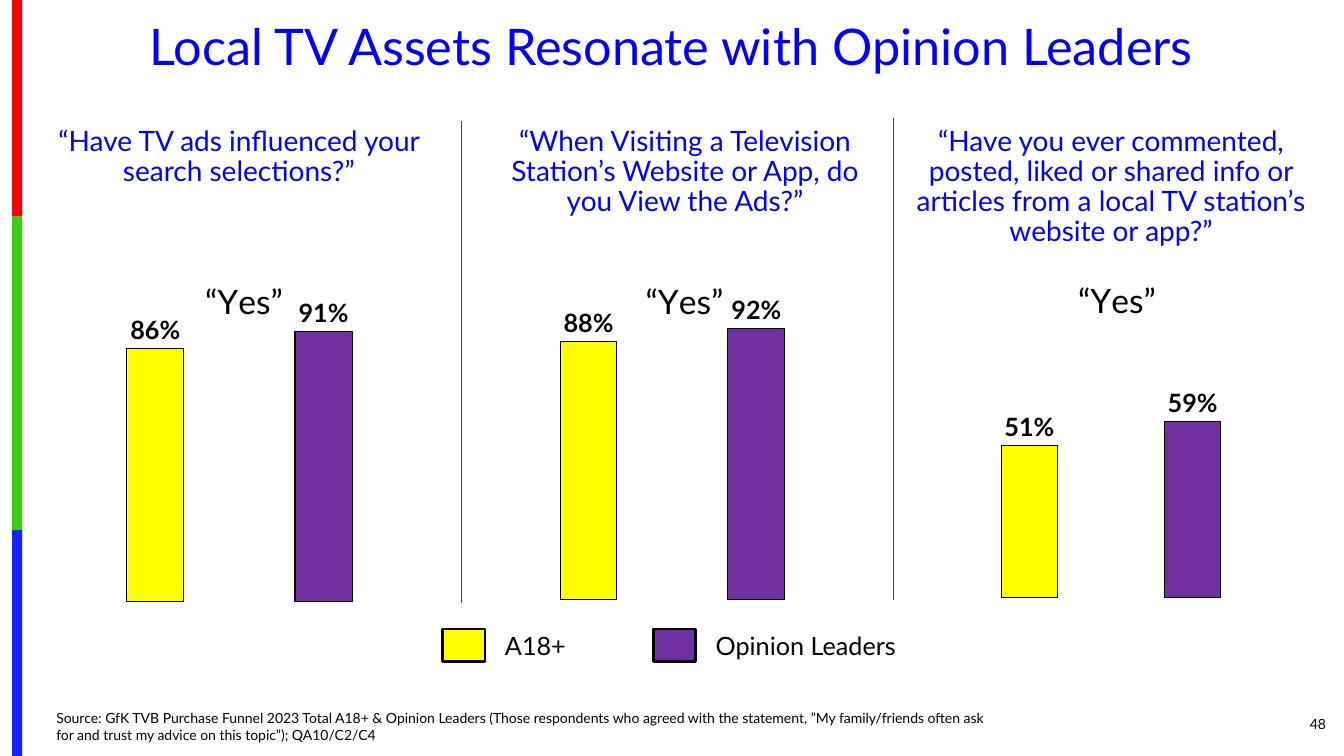
"""Build the slide on local TV assets and opinion leaders."""
from lxml import etree
from pptx import Presentation
from pptx import util as u
from pptx.chart.data import CategoryChartData
from pptx.dml.color import RGBColor
from pptx.enum import chart as ch, shapes, text
from pptx.oxml import parse_xml
from pptx.oxml.ns import nsdecls, qn

BLUE, BLACK, YELLOW, PURPLE, RULE = "0000FF", "000000", "FFFF00", "7030A0", "2D2DFE"
LEFT, CENTER, RIGHT = text.PP_ALIGN.LEFT, text.PP_ALIGN.CENTER, text.PP_ALIGN.RIGHT
TOP, MIDDLE, BOTTOM = text.MSO_ANCHOR.TOP, text.MSO_ANCHOR.MIDDLE, text.MSO_ANCHOR.BOTTOM


def rgb(value):
    return RGBColor.from_string(value)


def inches(*values):
    return [u.Inches(v) for v in values]


def set_attrs(obj, values):
    for name, value in values.items():
        setattr(obj, name, value)


class Deck:
    def __init__(self, font):
        self.font = font
        self.prs = Presentation()
        self.prs.slide_width, self.prs.slide_height = inches(13.33, 7.5)
        self.s = self.prs.slides.add_slide(self.prs.slide_layouts[5])

    def style(self, font, size, color=BLACK, bold=False):
        set_attrs(font, {"name": self.font, "size": u.Pt(size), "bold": bold})
        font.color.rgb = rgb(color)

    def fill_text(self, sp, words, size, color, align, anchor, spacing, wrap):
        tf = sp.text_frame
        set_attrs(tf, {"word_wrap": wrap, "vertical_anchor": anchor})
        p = tf.paragraphs[0]
        set_attrs(p, {"alignment": align, "line_spacing": spacing})
        r = p.add_run()
        r.text = words
        self.style(r.font, size, color)

    def title(self, words, box):
        sp = self.s.shapes.title
        set_attrs(sp, dict(zip(("left", "top", "width", "height"), inches(*box))))
        self.fill_text(sp, words, 36, BLUE, CENTER, TOP, 0.9, True)

    def label(self, words, box, size, color=BLACK, align=LEFT, anchor=TOP,
              spacing=1.0, wrap=True):
        sp = self.s.shapes.add_textbox(*inches(*box))
        self.fill_text(sp, words, size, color, align, anchor, spacing, wrap)

    def rect(self, box, color, line_width=None):
        sp = self.s.shapes.add_shape(shapes.MSO_SHAPE.RECTANGLE, *inches(*box))
        sp.shadow.inherit = False
        sp.fill.solid()
        sp.fill.fore_color.rgb = rgb(color)
        if line_width:
            sp.line.color.rgb = rgb(BLACK)
            sp.line.width = u.Pt(line_width)
        else:
            sp.line.fill.background()

    def divider(self, x, top, bottom):
        sp = self.s.shapes.add_connector(
            shapes.MSO_CONNECTOR.STRAIGHT, *inches(x, top, x, bottom))
        sp.line.color.rgb = rgb(RULE)
        sp.line.width = u.Pt(0.75)
        etree.SubElement(sp._element.spPr, qn("a:effectLst"))

    def place(self, element, index, target="", **edges):
        for old in element.findall(qn("c:layout")):
            element.remove(old)
        inner = f'<c:layoutTarget val="{target}"/>' if target else ""
        modes = "".join(f'<c:{k}Mode val="edge"/>' for k in "xy")
        sizes = "".join(f'<c:{k} val="{v}"/>' for k, v in edges.items())
        element.insert(index, parse_xml(
            f'<c:layout {nsdecls("c")}><c:manualLayout>{inner}{modes}{sizes}'
            "</c:manualLayout></c:layout>"))

    def chart(self, box, values, minimum, heading, plot):
        data = CategoryChartData(number_format="0%")
        data.categories = ["1", "2"]
        data.add_series("Series 1", values)
        chart = self.s.shapes.add_chart(
            ch.XL_CHART_TYPE.COLUMN_CLUSTERED, *inches(*box), data).chart
        chart.has_legend = False
        self.style(chart.font, 10)
        chart.has_title = True
        title = chart.chart_title
        r = title.text_frame.paragraphs[0].add_run()
        r.text = "“Yes”"
        self.style(r.font, 24)
        self.place(title._element, 1, x=heading[0], y=heading[1])
        title._element.find(qn("c:overlay")).set("val", "1")
        self.place(chart._chartSpace.chart.plotArea, 0, "inner",
                   **dict(zip("xywh", plot)))
        set_attrs(chart.value_axis, {
            "minimum_scale": minimum, "maximum_scale": 1,
            "has_major_gridlines": False, "visible": False})
        chart.category_axis.visible = False
        bars = chart.plots[0]
        set_attrs(bars, {"gap_width": 195, "overlap": 51,
                         "vary_by_categories": False, "has_data_labels": True})
        set_attrs(bars.data_labels, {
            "show_value": True, "number_format": "0%",
            "number_format_is_linked": False,
            "position": ch.XL_LABEL_POSITION.OUTSIDE_END})
        self.style(bars.data_labels.font, 18, bold=True)
        for i, color in enumerate((YELLOW, PURPLE)):
            fmt = bars.series[0].points[i].format
            fmt.fill.solid()
            fmt.fill.fore_color.rgb = rgb(color)
            fmt.line.color.rgb = rgb(BLACK)
            fmt.line.width = u.Pt(0.75)


def main():
    d = Deck("Lato")
    stripes = [(0, 2.15, "FE0000"), (2.15, 5.26, "36CF12"), (5.26, 7.5, "1322FE")]
    for top, bottom, color in stripes:
        d.rect((0.12, top, 0.1, bottom - top), color)
    d.title("Local TV Assets Resonate with Opinion Leaders", (0.45, 0.17, 12.42, 0.65))
    d.label("48", (12.17, 6.98, 1.08, 0.4), 10, align=RIGHT, anchor=MIDDLE)

    panels = [
        ("“Have TV ads influenced your search selections?”", (0.41, 3.92, 0.71),
         (0.56, 3.63), (0.86, 0.91), 0.1, (0.39, 0.07), (0.04, 0.155, 0.92, 0.833)),
        ("“When Visiting a Television Station’s Website or App, do you View the Ads?”",
         (4.73, 4.13, 1.01), (4.86, 3.62), (0.88, 0.92), 0.1, (0.41, 0.07),
         (0.04, 0.155, 0.92, 0.829)),
        ("“Have you ever commented, posted, liked or shared info or articles from "
         "a local TV station’s website or app?”", (8.81, 4.42, 1.31),
         (9.26, 3.52), (0.51, 0.59), 0, (0.39, 0.065), (0.04, 0.148, 0.92, 0.829)),
    ]
    for question, (x, w, h), (left, width), values, minimum, heading, plot in panels:
        d.chart((left, 2.44, width, 3.57), values, minimum, heading, plot)
        d.label(question, (x, 1.21, w, h), 20, BLUE, CENTER, spacing=0.9)

    legend = [("A18+", 4.39, 0.81, YELLOW), ("Opinion Leaders", 6.48, 2, PURPLE)]
    for name, x, width, color in legend:
        d.rect((x, 6.24, 0.42, 0.32), color, 2)
        d.label(name, (x + 0.52, 6.2, width, 0.4), 18, wrap=False)

    for x, top in ((4.58, 1.2), (8.86, 1.17)):
        d.divider(x, top, top + 4.78)

    d.label("Source: GfK TVB Purchase Funnel 2023 Total A18+ & Opinion Leaders "
            "(Those respondents who agreed with the statement, ”My family/friends "
            "often ask for and trust my advice on this topic”); QA10/C2/C4",
            (0.46, 6.98, 9.45, 0.44), 10, anchor=BOTTOM)
    d.prs.save("out.pptx")


if __name__ == "__main__":
    main()
